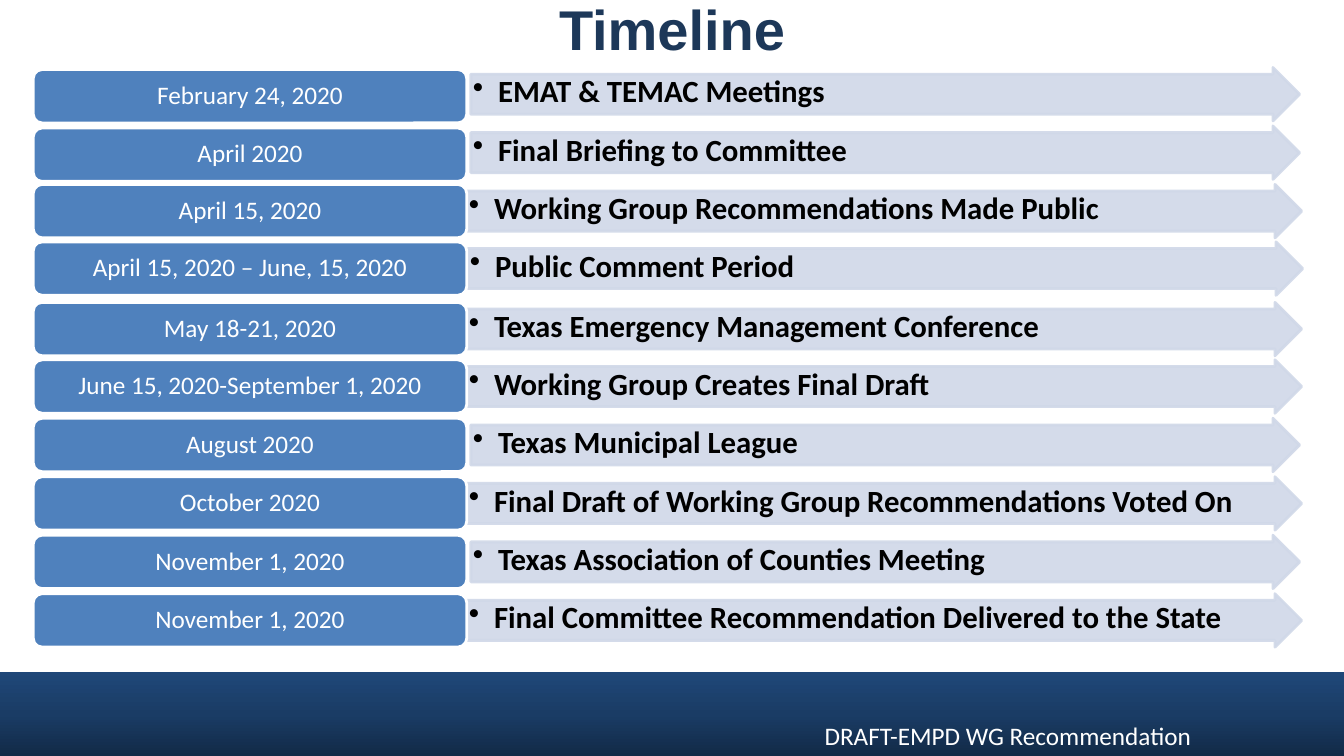
"""Builds the Timeline slide: dated boxes, each followed by an arrow naming the milestone."""
import copy

import pptx
import pptx.dml.color
import pptx.enum.shapes
import pptx.enum.text
import pptx.oxml.ns
import pptx.util
from lxml import etree

PX = 9144
RGB = pptx.dml.color.RGBColor
SHAPE = pptx.enum.shapes.MSO_SHAPE
ALIGN = pptx.enum.text.PP_ALIGN
ANCHOR = pptx.enum.text.MSO_ANCHOR
Pt = pptx.util.Pt
qn = pptx.oxml.ns.qn

NAVY = RGB(0x1D, 0x38, 0x59)
BLUE = RGB(0x4F, 0x81, 0xBD)
PALE = RGB(0xD0, 0xD8, 0xE8)
WHITE = RGB(0xFF, 0xFF, 0xFF)
BLACK = RGB(0, 0, 0)
BAND = [RGB(0x12, 0x2A, 0x47), RGB(0x1A, 0x3C, 0x65), RGB(0x1F, 0x47, 0x78)]


def add_shape(kind, left, top, width, height):
    """Adds a preset shape, measured in px, without a shadow."""
    sp = slide.shapes.add_shape(kind, left * PX, top * PX, width * PX, height * PX)
    sp.shadow.inherit = False
    return sp


def write(sp, text, size, color, align, anchor, inset, font="Calibri", bold=False):
    """Fills a shape with one formatted paragraph and returns the paragraph."""
    tf = sp.text_frame
    tf.word_wrap = True
    tf.vertical_anchor = anchor
    tf.margin_left = tf.margin_right = inset[0] * PX
    tf.margin_top = tf.margin_bottom = inset[1] * PX
    p = tf.paragraphs[0]
    p.text = text
    p.alignment = align
    p.line_spacing = 0.9
    r = p.runs[0]
    r.font.name = font
    r.font.size = Pt(size)
    r.font.bold = bold
    r.font.color.rgb = color
    return p


prs = pptx.Presentation()
prs.slide_width = 1333 * PX
prs.slide_height = 750 * PX
slide = prs.slides.add_slide(prs.slide_layouts[5])

title = slide.shapes.title
title.left, title.top, title.width, title.height = 214 * PX, 0, 905 * PX, 64 * PX
write(title, "Timeline", 40, NAVY, ALIGN.CENTER, ANCHOR.MIDDLE, (11, 5), "Arial", True)

band = add_shape(SHAPE.RECTANGLE, 0, 667, 1333, 83)
band.line.fill.background()
band.fill.gradient()
band.fill.gradient_angle = 90
first = band.fill._fill._gradFill.find(qn("a:gsLst"))[0]
first.addnext(copy.deepcopy(first))
for i, stop in enumerate(band.fill.gradient_stops):
    stop.color.rgb = BAND[i]
    stop.position = i / 2

milestones = [
    (467, 67, 69, "February 24, 2020", "EMAT & TEMAC Meetings"),
    (467, 125, 127, "April 2020", "Final Briefing to Committee"),
    (463, 183, 183, "April 15, 2020", "Working Group Recommendations Made Public"),
    (464, 240, 240, "April 15, 2020 – June, 15, 2020", "Public Comment Period"),
    (463, 300, 300, "May 18-21, 2020", "Texas Emergency Management Conference"),
    (463, 357, 357, "June 15, 2020-September 1, 2020", "Working Group Creates Final Draft"),
    (467, 415, 415, "August 2020", "Texas Municipal League"),
    (463, 473, 473, "October 2020", "Final Draft of Working Group Recommendations Voted On"),
    (467, 531, 531, "November 1, 2020", "Texas Association of Counties Meeting"),
    (463, 589, 589, "November 1, 2020", "Final Committee Recommendation Delivered to the State"),
]
for left, arrow_top, box_top, date, event in milestones:
    arrow = add_shape(SHAPE.RIGHT_ARROW, left, arrow_top, 822 if left == 467 else 828, 53)
    arrow.adjustments[0] = 0.75
    arrow.adjustments[1] = 0.5
    arrow.fill.solid()
    arrow.fill.fore_color.rgb = PALE
    arrow.line.color.rgb = PALE
    arrow.line.width = Pt(2)
    for color in arrow._element.spPr.iter(qn("a:srgbClr")):
        etree.SubElement(color, qn("a:alpha"), val="90000")
    p = write(arrow, event, 22, BLACK, ALIGN.LEFT, ANCHOR.TOP, (2, 2), bold=True)
    pPr = p._p.get_or_add_pPr()
    pPr.set("marL", str(25 * PX))
    pPr.set("indent", str(-25 * PX))
    etree.SubElement(pPr, qn("a:buChar"), char="•")

    box = add_shape(SHAPE.ROUNDED_RECTANGLE, 33, box_top, 430, 53)
    box.fill.solid()
    box.fill.fore_color.rgb = BLUE
    box.line.color.rgb = WHITE
    box.line.width = Pt(2)
    write(box, date, 18, WHITE, ALIGN.CENTER, ANCHOR.MIDDLE, (7, 4))

footer = slide.shapes.add_textbox(808 * PX, 710 * PX, 559 * PX, 40 * PX)
p = write(footer, "DRAFT-EMPD WG Recommendation", 18, WHITE, ALIGN.LEFT, ANCHOR.TOP, (10, 5))
p.line_spacing = 1.0
footer.text_frame.auto_size = pptx.enum.text.MSO_AUTO_SIZE.SHAPE_TO_FIT_TEXT

prs.save("out.pptx")
